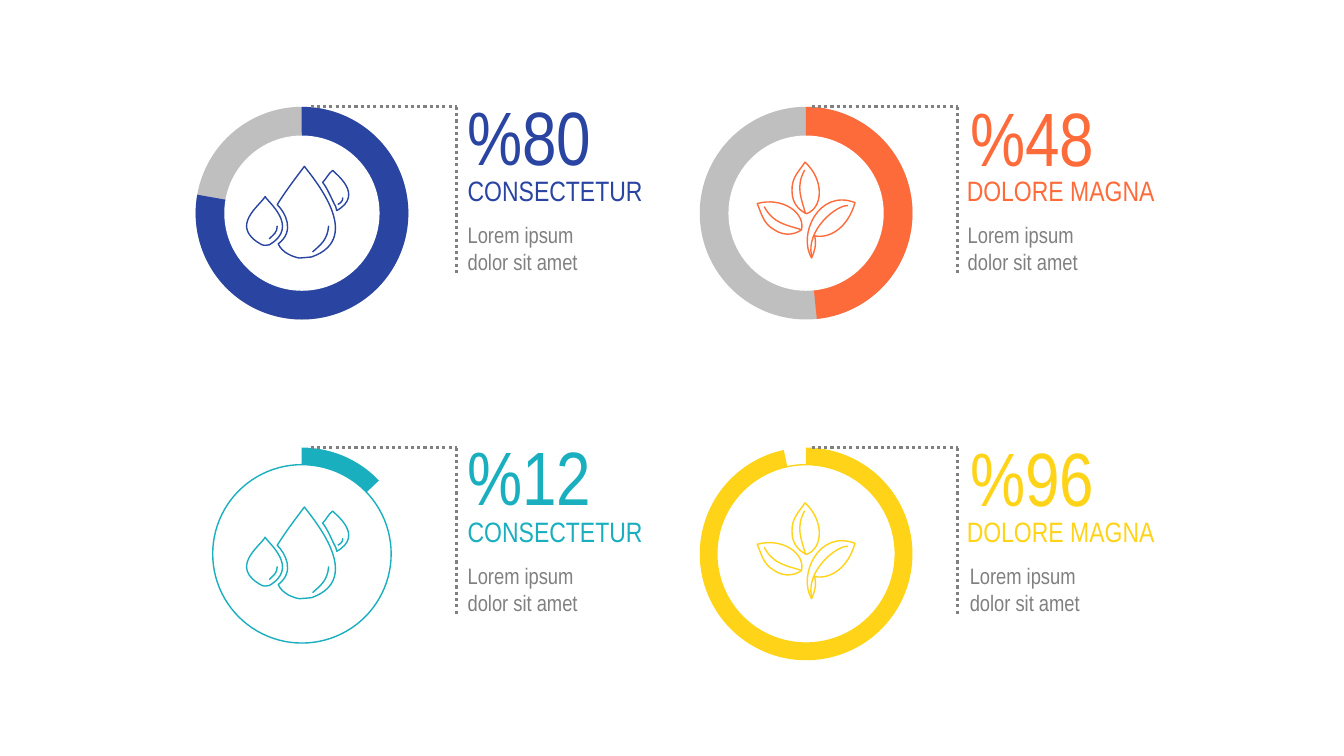
from dataclasses import dataclass

from lxml import etree
from pptx import Presentation
from pptx.dml.color import RGBColor
from pptx.enum.dml import MSO_LINE
from pptx.enum.shapes import MSO_CONNECTOR, MSO_SHAPE
from pptx.enum.text import MSO_ANCHOR, MSO_AUTO_SIZE, PP_ALIGN
from pptx.oxml.ns import qn
from pptx.util import Inches, Pt

DOTTED = MSO_LINE.ROUND_DOT
STRAIGHT = MSO_CONNECTOR.STRAIGHT
ELLIPSE, PIE = MSO_SHAPE.OVAL, MSO_SHAPE.PIE
MIDDLE, TOP = MSO_ANCHOR.MIDDLE, MSO_ANCHOR.TOP
LEFT, CENTER = PP_ALIGN.LEFT, PP_ALIGN.CENTER
GROW = MSO_AUTO_SIZE.SHAPE_TO_FIT_TEXT

BLUE = RGBColor(0x29, 0x44, 0xA1)
ORANGE = RGBColor(0xFE, 0x6B, 0x3A)
TEAL = RGBColor(0x19, 0xAF, 0xBF)
YELLOW = RGBColor(0xFF, 0xD4, 0x18)
SILVER = RGBColor(0xBF, 0xBF, 0xBF)
GRAY = RGBColor(0x80, 0x80, 0x80)
WHITE = RGBColor(0xFF, 0xFF, 0xFF)

FONT = "Arial Narrow"
RING_SIZE = 2.11
TEXT_RIGHT = 4.73
START_ANGLE = 269.84
ROW_TOPS = (1.06, 4.44)
CURVE_STEPS = 20


@dataclass
class Stroke:
    """A start point, then three points per cubic curve, in hundredths of an
    inch from the ring's top left corner; moved and turned as a whole."""
    points: list
    shift: tuple = (0, 0)
    rotation: float = 0


LEAF = [(101, 122), (97, 125), (86, 130), (74, 122), (62, 115), (61, 104), (57, 96),
        (82, 89), (105, 105), (101, 122)]
VEIN = [(64, 99), (73, 116), (86, 117), (101, 122)]
LEAVES = (
    Stroke(LEAF),
    Stroke(LEAF, (25, -29), 57.6),
    Stroke(VEIN),
    Stroke(VEIN, (22, -26), 57),
    Stroke([(111, 150), (97, 127), (118, 81), (154, 95), (147, 120), (129, 131),
            (114, 128), (116, 137), (114, 143), (111, 150)]),
    Stroke([(111, 148), (105, 122), (136, 97), (147, 98)]),
)
DROPS = (
    Stroke([(69, 89), (64, 98), (32, 119), (66, 137), (70, 138), (70, 137), (73, 137),
            (104, 119), (71, 94), (69, 89)]),
    Stroke([(108, 59), (99, 71), (89, 84), (81, 97), (89, 105), (99, 123), (82, 136),
            (86, 145), (97, 149), (103, 150), (109, 150), (109, 150), (115, 149),
            (169, 130), (115, 69), (108, 59)]),
    Stroke([(136, 63), (131, 67), (130, 71), (126, 75), (131, 81), (136, 94), (139, 99),
            (140, 102), (139, 100), (140, 103), (168, 87), (138, 66), (136, 63)]),
    Stroke([(81, 118), (81, 125), (77, 127), (73, 131)]),
    Stroke([(132, 118), (131, 132), (124, 137), (116, 144)]),
    Stroke([(146, 90), (146, 94), (144, 95), (141, 97)]),
)


@dataclass
class Column:
    """Parts shared by a column; offsets are from the ring's left or top."""
    left: float
    label: str
    icon: tuple
    line_start: float
    corner: float
    label_left: float
    number_left: float
    number_top: float


@dataclass
class Gauge:
    column: Column
    row: int
    number: str
    end_angle: float
    color: RGBColor
    note_left: float


DROP_COLUMN = Column(1.94, "CONSECTETUR", DROPS, 1.14, 2.59, 2.6, 2.59, -0.22)
LEAF_COLUMN = Column(6.94, "DOLORE MAGNA", LEAVES, 1.11, 2.56, 2.55, 2.58, -0.21)
GAUGES = (
    Gauge(DROP_COLUMN, 0, "%80", 190.01, BLUE, 2.6),
    Gauge(LEAF_COLUMN, 0, "%48", 84.22, ORANGE, 2.56),
    Gauge(DROP_COLUMN, 1, "%12", 316.33, TEAL, 2.6),
    Gauge(LEAF_COLUMN, 1, "%96", 257.86, YELLOW, 2.58),
)


def add_disc(group, kind, left, top, size, fill, outline=None):
    inset = (RING_SIZE - size) / 2
    disc = group.shapes.add_shape(kind, Inches(left + inset), Inches(top + inset),
                                  Inches(size), Inches(size))
    disc.shadow.inherit = False
    disc.fill.solid()
    disc.fill.fore_color.rgb = fill
    if outline is None:
        disc.line.fill.background()
    else:
        disc.line.color.rgb = outline
        disc.line.width = Pt(1)
    return disc


def add_ring(group, left, top, gauge):
    """Upper gauges have a grey track, lower ones an outlined hole."""
    has_track = gauge.row == 0
    if has_track:
        add_disc(group, ELLIPSE, left, top, RING_SIZE, SILVER)
    share = add_disc(group, PIE, left, top, RING_SIZE, gauge.color)
    for index, angle in enumerate((START_ANGLE, gauge.end_angle)):
        share.adjustments[index] = angle * 0.6  # 60000 units a degree, scaled by 100000
    if has_track:
        add_disc(group, ELLIPSE, left, top, 1.54, WHITE)
    else:
        add_disc(group, ELLIPSE, left, top, 1.77, WHITE, gauge.color)


def add_text(group, box, lines, size, color, align=LEFT, anchor=MIDDLE,
             wrap=True, right_inset=0.1):
    text_box = group.shapes.add_textbox(*(Inches(length) for length in box))
    frame = text_box.text_frame
    frame.word_wrap = wrap
    frame.auto_size = GROW
    frame.vertical_anchor = anchor
    frame.margin_right = Inches(right_inset)
    for index, line in enumerate(lines):
        paragraph = frame.add_paragraph() if index else frame.paragraphs[0]
        paragraph.alignment = align
        run = paragraph.add_run()
        run.text = line
        run.font.name = FONT
        run.font.size = Pt(size)
        run.font.color.rgb = color


def add_dotted_line(group, start, end):
    line = group.shapes.add_connector(STRAIGHT, *(Inches(v) for v in start + end))
    line.line.color.rgb = GRAY
    line.line.width = Pt(2.25)
    line.line.dash_style = DOTTED
    etree.SubElement(line._element.spPr, qn("a:effectLst"))


def curve_range(values):
    """Least and greatest value along one axis of a chain of cubic curves."""
    reached = [values[0]]
    for first in range(0, len(values) - 1, 3):
        a, b, c, d = values[first:first + 4]
        for step in range(1, CURVE_STEPS + 1):
            t = step / CURVE_STEPS
            u = 1 - t
            reached.append(a * u ** 3 + 3 * b * t * u * u + 3 * c * t * t * u + d * t ** 3)
    return min(reached), max(reached)


def add_stroke(group, left, top, stroke, color):
    points = [(Inches(left + (x + stroke.shift[0]) / 100),
               Inches(top + (y + stroke.shift[1]) / 100)) for x, y in stroke.points]
    (x_min, x_max), (y_min, y_max) = (curve_range(values) for values in zip(*points))
    builder = group.shapes.build_freeform(round(x_min), round(y_min))
    builder.add_line_segments([(round(x_max), round(y_max))], close=False)
    outline = builder.convert_to_shape()

    # Trade the box diagonal for cubic curves
    curve_path = outline._element.find(".//" + qn("a:path"))
    for child in list(curve_path):
        curve_path.remove(child)
    for index, (x, y) in enumerate(points):
        if index == 0:
            command = etree.SubElement(curve_path, qn("a:moveTo"))
        elif index % 3 == 1:
            command = etree.SubElement(curve_path, qn("a:cubicBezTo"))
        etree.SubElement(command, qn("a:pt"), x=str(round(x - x_min)), y=str(round(y - y_min)))
    if points[0] == points[-1]:
        etree.SubElement(curve_path, qn("a:close"))

    outline.rotation = stroke.rotation
    outline.shadow.inherit = False
    outline.fill.background()
    outline.line.color.rgb = color
    outline.line.width = Pt(1)


def add_gauge(slide, gauge):
    column, color = gauge.column, gauge.color
    left, top = column.left, ROW_TOPS[gauge.row]
    group = slide.shapes.add_group_shape()
    add_ring(group, left, top, gauge)
    # Number, label and note
    add_text(group, (left + gauge.note_left, top + 1.08, TEXT_RIGHT - gauge.note_left, 0.64),
             ("Lorem ipsum", "dolor sit amet"), 16, GRAY, right_inset=0.2)
    add_text(group, (left + column.label_left, top + 0.61, TEXT_RIGHT - column.label_left, 0.44),
             (column.label,), 20, color)
    add_text(group, (left + column.number_left, top + column.number_top, 1.44, 1.01),
             (gauge.number,), 54, color, align=CENTER, anchor=TOP, wrap=False)
    # Dotted bracket from the ring to the text
    corner = (left + column.corner, top)
    add_dotted_line(group, (left + column.line_start, top), corner)
    add_dotted_line(group, corner, (corner[0], top + 1.65))
    for stroke in column.icon:
        add_stroke(group, left, top, stroke, color)


presentation = Presentation()
presentation.slide_width = Inches(13.33)
presentation.slide_height = Inches(7.5)
gauge_slide = presentation.slides.add_slide(presentation.slide_layouts[6])
for slide_gauge in GAUGES:
    add_gauge(gauge_slide, slide_gauge)
presentation.save("out.pptx")
